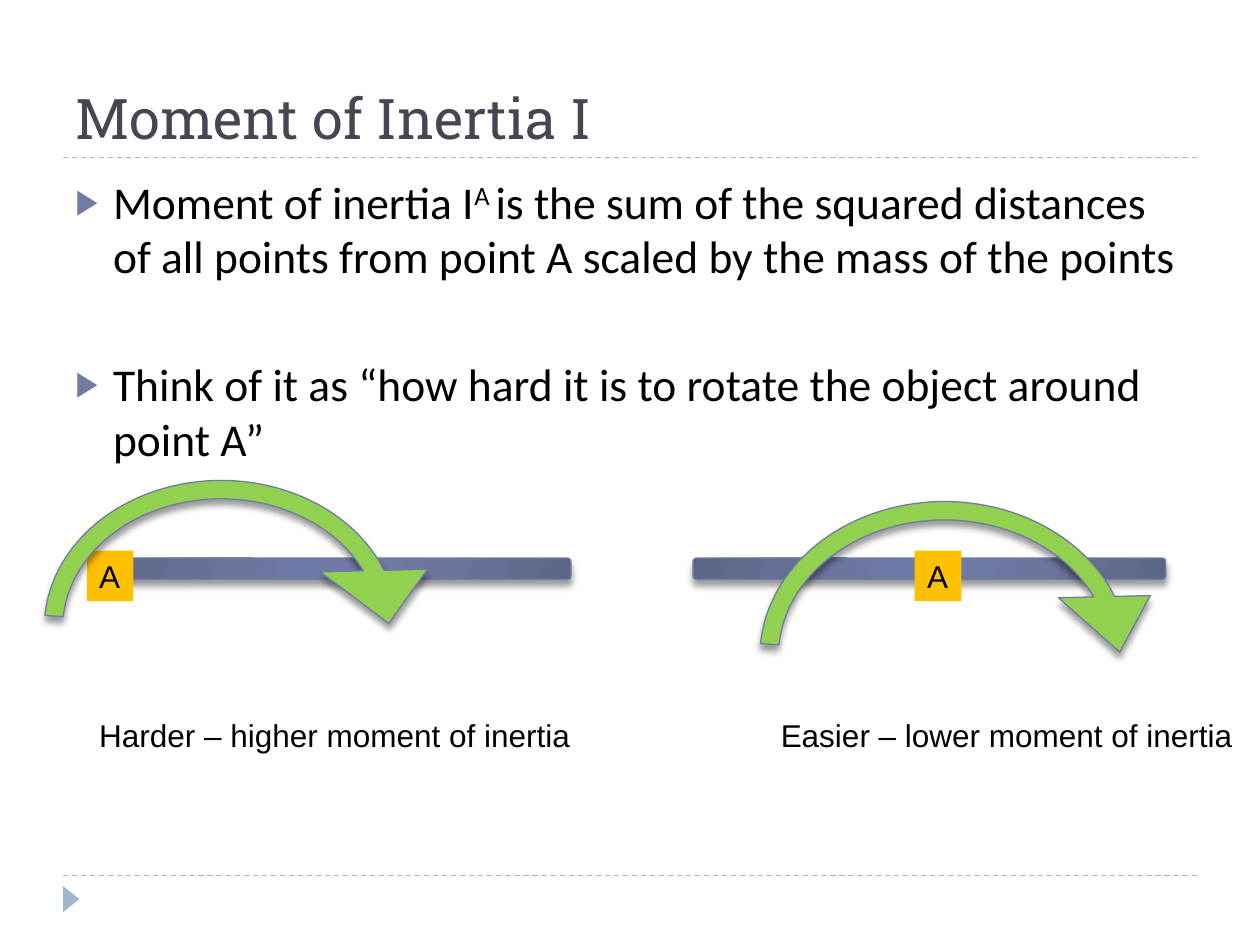
"""Build the slide on the moment of inertia."""
import pptx
import pptx.dml.color
import pptx.enum.dml
import pptx.enum.shapes
import pptx.enum.text
import pptx.oxml
import pptx.oxml.ns
import pptx.util

Cm = pptx.util.Cm
Pt = pptx.util.Pt
KIND = pptx.enum.shapes.MSO_SHAPE
ANCHOR = pptx.enum.text.MSO_ANCHOR
NS = 'xmlns:a="http://schemas.openxmlformats.org/drawingml/2006/main"'

BLUE, PALE, GREEN, GOLD = "727CA3", "9FB8CD", "92D050", "FFC000"
TITLE = "Moment of Inertia I"
POINTS = [
    (6, [("Moment of inertia I", 0), ("A ", 30),
         ("is the sum of the squared distances of all points from point A "
          "scaled by the mass of the points", 0)]),
    (42, [("Think of it as “how hard it is to rotate the object around point A”", 0)]),
]
RULES = [17.65, 3.18]
BARS = [1.98, 13.97]
PIVOTS = [1.75, 18.44]
ARROWS = [(14.58, 9.37, 0.12), (0, 8.79, 0.14)]
LABELS = [(15.49, 9.7, "Easier – lower moment of inertia"),
          (1.75, 10.08, "Harder – higher moment of inertia")]
STOPS = [(0, "5D6585"), (30, "6B759E"), (45, "6E79A7"),
         (55, "6E79A7"), (73, "6B759E"), (100, "5D6585")]


def color(code):
    return pptx.dml.color.RGBColor.from_string(code)


def node(xml):
    return pptx.oxml.parse_xml(xml.replace(" ", f" {NS} ", 1))


def write(box, text, size=18, font="Arial", ink="000000", wrap=False, anchor=ANCHOR.TOP):
    frame = box.text_frame
    frame.word_wrap = wrap
    frame.vertical_anchor = anchor
    if not wrap:
        frame.auto_size = pptx.enum.text.MSO_AUTO_SIZE.SHAPE_TO_FIT_TEXT
    items = [(0, [(text, 0)])] if isinstance(text, str) else text
    for i, (gap, runs) in enumerate(items):
        para = frame.add_paragraph() if i else frame.paragraphs[0]
        para.space_before = Pt(gap)
        for words, lift in runs:
            run = para.add_run()
            run.text = words
            run.font.size = Pt(size)
            run.font.name = font
            run.font.color.rgb = color(ink)
            if lift:
                run.font._element.set("baseline", str(lift * 1000))
    return frame


def text_box(slide, x, y, w, h, text, **form):
    box = slide.shapes.add_textbox(Cm(x), Cm(y), Cm(w), Cm(h))
    return box, write(box, text, **form)


def bullet(para):
    props = para._p.get_or_add_pPr()
    props.set("marL", str(Cm(0.76)))
    props.set("indent", str(Cm(-0.76)))
    for xml in (f'<a:buClr ><a:srgbClr val="{BLUE}"/></a:buClr>',
                '<a:buSzPct val="76000"/>', '<a:buFont typeface="Arial"/>',
                '<a:buChar char="▶"/>'):
        props.append(node(xml))


def shape(slide, kind, x, y, w, h, fill=None, edge=None):
    form = slide.shapes.add_shape(kind, Cm(x), Cm(y), Cm(w), Cm(h))
    form.shadow.inherit = False
    if fill:
        form.fill.solid()
        form.fill.fore_color.rgb = color(fill)
    if edge:
        form.line.color.rgb = color(edge)
        form.line.width = Pt(0.75)
        cast = form._element.spPr.find(pptx.oxml.ns.qn("a:effectLst"))
        cast.append(node('<a:outerShdw blurRad="50800" dist="43180" dir="5400000" '
                         'rotWithShape="0"><a:srgbClr val="000000">'
                         '<a:alpha val="40000"/></a:srgbClr></a:outerShdw>'))
    else:
        form.line.fill.background()
    return form


def shade(form):
    form.fill.gradient()
    form.fill.gradient_angle = 344
    stops = form._element.spPr.find(".//" + pptx.oxml.ns.qn("a:gsLst"))
    for old in list(stops):
        stops.remove(old)
    for part, code in STOPS:
        stops.append(node(f'<a:gs pos="{part * 1000}"><a:srgbClr val="{code}"/></a:gs>'))


def rule(slide, y):
    line = slide.shapes.add_connector(
        pptx.enum.shapes.MSO_CONNECTOR.STRAIGHT, Cm(1.27), Cm(y), Cm(24.13), Cm(y))
    line.line.color.rgb = color(PALE)
    line.line.width = Pt(0.75)
    line.line.dash_style = pptx.enum.dml.MSO_LINE.DASH
    line._element.spPr.append(node("<a:effectLst />"))


def main():
    deck = pptx.Presentation()
    deck.slide_width, deck.slide_height = Cm(25.4), Cm(19.05)
    slide = deck.slides.add_slide(deck.slide_layouts[6])
    for y in RULES:
        rule(slide, y)
    shape(slide, KIND.ISOSCELES_TRIANGLE, 1.17, 17.96, 0.53, 0.33, PALE).rotation = 90

    text_box(slide, 1.27, 0.43, 22.86, 2.74, TITLE, size=32, font="Roboto Slab",
             ink="464653", wrap=True, anchor=ANCHOR.BOTTOM)
    body = text_box(slide, 1.27, 3.38, 22.86, 13.72, POINTS, size=26,
                    font="Calibri", wrap=True)[1]
    for para in body.paragraphs:
        bullet(para)

    for x in BARS:
        shade(shape(slide, KIND.ROUNDED_RECTANGLE, x, 11.25, 9.53, 0.43, edge=BLUE))
    for x in PIVOTS:
        box = text_box(slide, x, 11.1, 0.94, 1.02, "A")[0]
        box.fill.solid()
        box.fill.fore_color.rgb = color(GOLD)
    for x, y, head in ARROWS:
        arrow = shape(slide, KIND.CIRCULAR_ARROW, x, y, 8.92, 7.72, GREEN, BLUE)
        for i, value in enumerate((0.048, 11.42, 203.74, 110.35, head)):
            arrow.adjustments[i] = value
    for x, w, words in LABELS:
        text_box(slide, x, 14.3, w, 1.02, words)
    deck.save("out.pptx")


if __name__ == "__main__":
    main()
